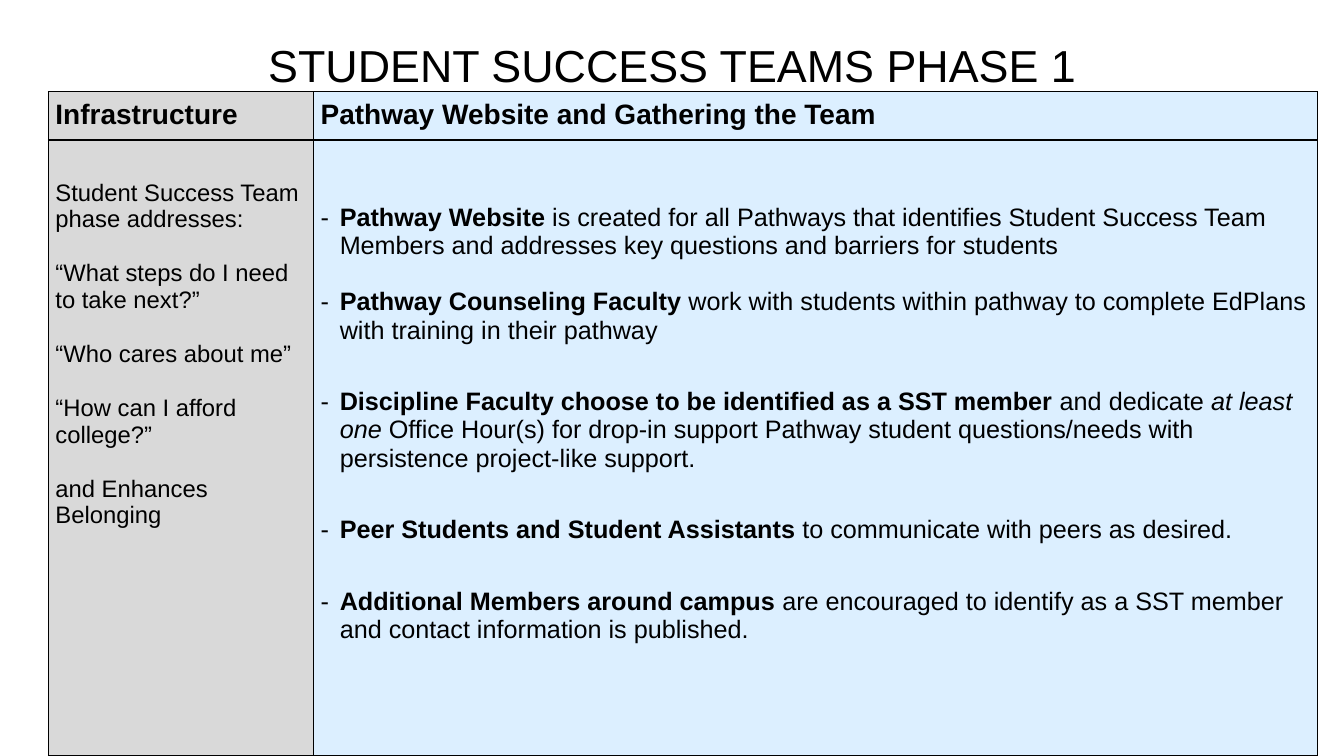
from dataclasses import dataclass

from lxml.etree import SubElement
from pptx import Presentation
from pptx.dml.color import RGBColor
from pptx.enum.text import MSO_ANCHOR, PP_ALIGN
from pptx.oxml.ns import qn
from pptx.util import Inches, Pt


@dataclass(frozen=True)
class Theme:
    font: str = "Arial"
    black: str = "000000"
    gray: str = "D9D9D9"
    blue: str = "DCEFFF"
    title: int = 32
    heading: int = 20
    body: int = 18
    side: int = 17
    border: int = 1


THEME = Theme()
PAD = 0.07

HEADINGS = ["Infrastructure", "Pathway Website and Gathering the Team"]

ADDRESSES = [
    "Student Success Team phase addresses:",
    "“What steps do I need to take next?”",
    "“Who cares about me”",
    "“How can I afford college?”",
    "and Enhances Belonging",
]

# Space before in points, then runs of text with "b" for bold and "i" for italic.
TEAM_STEPS = [
    (0, [("Pathway Website", "b"),
         (" is created for all Pathways that identifies Student Success Team Members "
          "and addresses key questions and barriers for students", "")]),
    (20, [("Pathway Counseling Faculty", "b"),
          (" work with students within pathway to complete EdPlans with training "
           "in their pathway", "")]),
    (31, [("Discipline Faculty choose to be identified as a SST member", "b"),
          (" and dedicate ", ""),
          ("at least one", "i"),
          (" Office Hour(s) for drop-in support Pathway student questions/needs with "
           "persistence project-like support.", "")]),
    (31, [("Peer Students and Student Assistants", "b"),
          (" to communicate with peers as desired.", "")]),
    (31, [("Additional Members around campus", "b"),
          (" are encouraged to identify as a SST member and contact information "
           "is published.", "")]),
]


def add_run(p, text, size, bold=False, italic=False):
    r = p.add_run()
    r.text = text
    r.font.name = THEME.font
    r.font.size = Pt(size)
    r.font.bold = bold
    r.font.italic = italic
    r.font.color.rgb = RGBColor.from_string(THEME.black)


def add_paragraph(tf, runs, size, before=0, align=PP_ALIGN.LEFT, bullet=None):
    """Fill the first paragraph if it is still empty, otherwise append one."""
    p = tf.paragraphs[0] if not tf.text else tf.add_paragraph()
    p.alignment = align
    p.space_before = Pt(before)
    for text, style in runs:
        add_run(p, text, size, bold=style == "b", italic=style == "i")
    if bullet:
        add_bullet(p, bullet)


def add_bullet(p, char, indent=0.19):
    pPr = p._p.get_or_add_pPr()
    pPr.set("marL", str(Inches(indent)))
    pPr.set("indent", str(-Inches(indent)))
    color = SubElement(pPr, qn("a:buClr"))
    SubElement(color, qn("a:srgbClr"), val=THEME.black)
    SubElement(pPr, qn("a:buFont"), typeface=THEME.font)
    SubElement(pPr, qn("a:buChar"), char=char)


def add_borders(cell):
    tcPr = cell._tc.get_or_add_tcPr()
    for side in ("lnL", "lnR", "lnT", "lnB"):
        ln = SubElement(tcPr, qn(f"a:{side}"), w=str(Pt(THEME.border)))
        fill = SubElement(ln, qn("a:solidFill"))
        SubElement(fill, qn("a:srgbClr"), val=THEME.black)


def format_cell(cell, fill, top=PAD):
    cell.margin_left = cell.margin_right = cell.margin_bottom = Inches(PAD)
    cell.margin_top = Inches(top)
    cell.vertical_anchor = MSO_ANCHOR.TOP
    add_borders(cell)
    cell.fill.solid()
    cell.fill.fore_color.rgb = RGBColor.from_string(fill)


def add_title(slide, text):
    box = slide.shapes.add_textbox(Inches(0.44), Inches(0.14), Inches(12.46), Inches(1.59))
    tf = box.text_frame
    tf.word_wrap = True
    tf.vertical_anchor = MSO_ANCHOR.TOP
    tf.margin_left = tf.margin_right = tf.margin_bottom = Inches(0.13)
    tf.margin_top = Inches(0.23)
    add_paragraph(tf, [(text, "")], THEME.title, align=PP_ALIGN.CENTER)


def add_phase_table(slide):
    widths, heights = (2.63, 9.96), (0.48, 6.11)
    frame = slide.shapes.add_table(2, 2, Inches(0.48), Inches(0.91),
                                   Inches(sum(widths)), Inches(sum(heights)))
    table = frame.table
    table.first_row = table.horz_banding = False
    for column, width in zip(table.columns, widths):
        column.width = Inches(width)
    for row, height in zip(table.rows, heights):
        row.height = Inches(height)

    body_tops = (0.39, 0.63)
    for col, fill in enumerate((THEME.gray, THEME.blue)):
        heading = table.cell(0, col)
        format_cell(heading, fill)
        add_paragraph(heading.text_frame, [(HEADINGS[col], "b")], THEME.heading)
        format_cell(table.cell(1, col), fill, top=body_tops[col])

    for i, text in enumerate(ADDRESSES):
        add_paragraph(table.cell(1, 0).text_frame, [(text, "")], THEME.side,
                      before=19.5 if i else 0)
    for before, runs in TEAM_STEPS:
        add_paragraph(table.cell(1, 1).text_frame, runs, THEME.body,
                      before=before, bullet="-")


def main():
    prs = Presentation()
    prs.slide_width, prs.slide_height = Inches(13.33), Inches(7.5)
    slide = prs.slides.add_slide(prs.slide_layouts[6])
    add_title(slide, "STUDENT SUCCESS TEAMS PHASE 1")
    add_phase_table(slide)
    prs.save("out.pptx")


if __name__ == "__main__":
    main()
